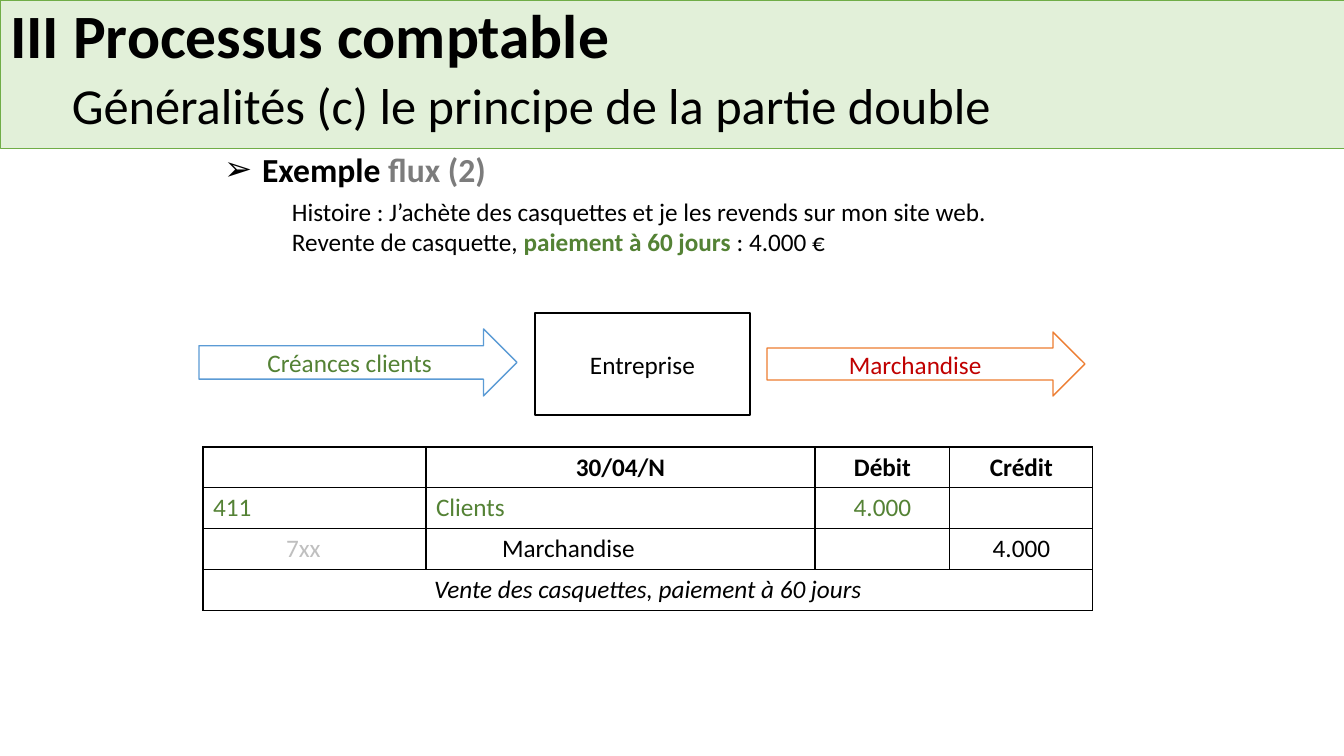
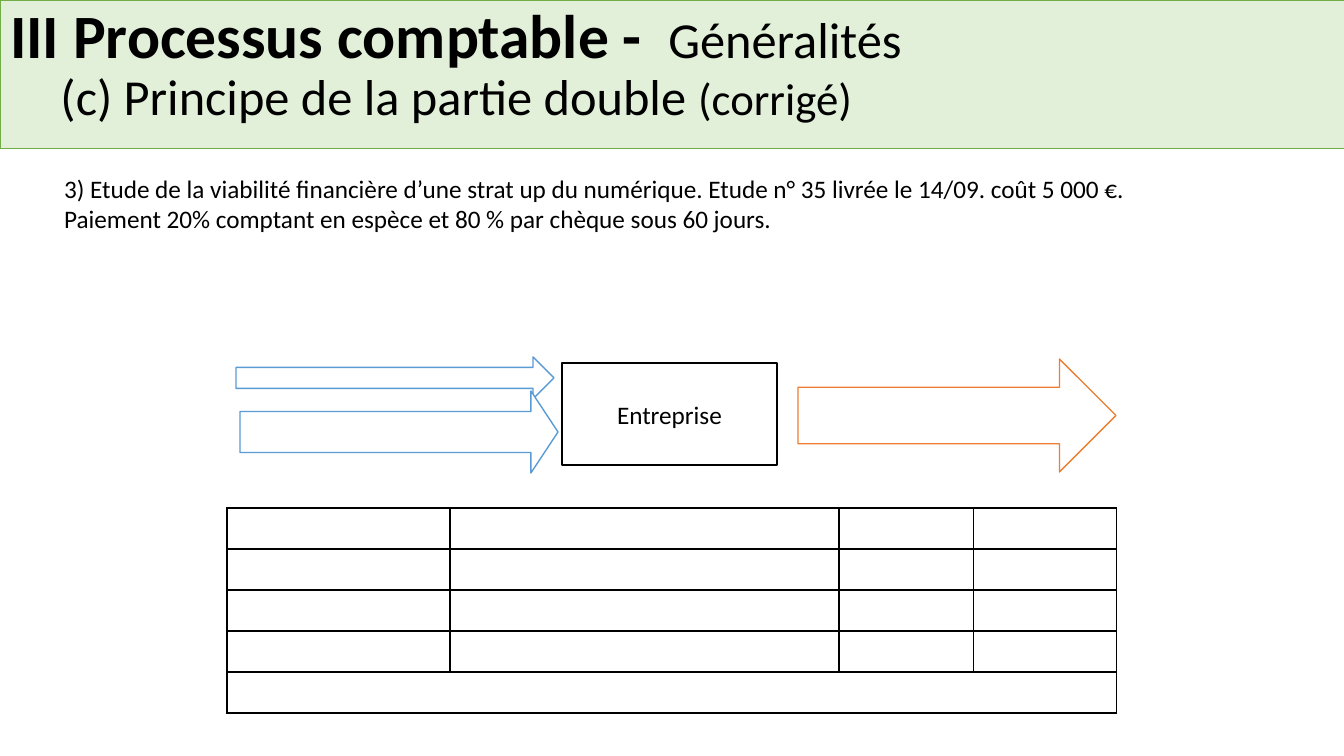
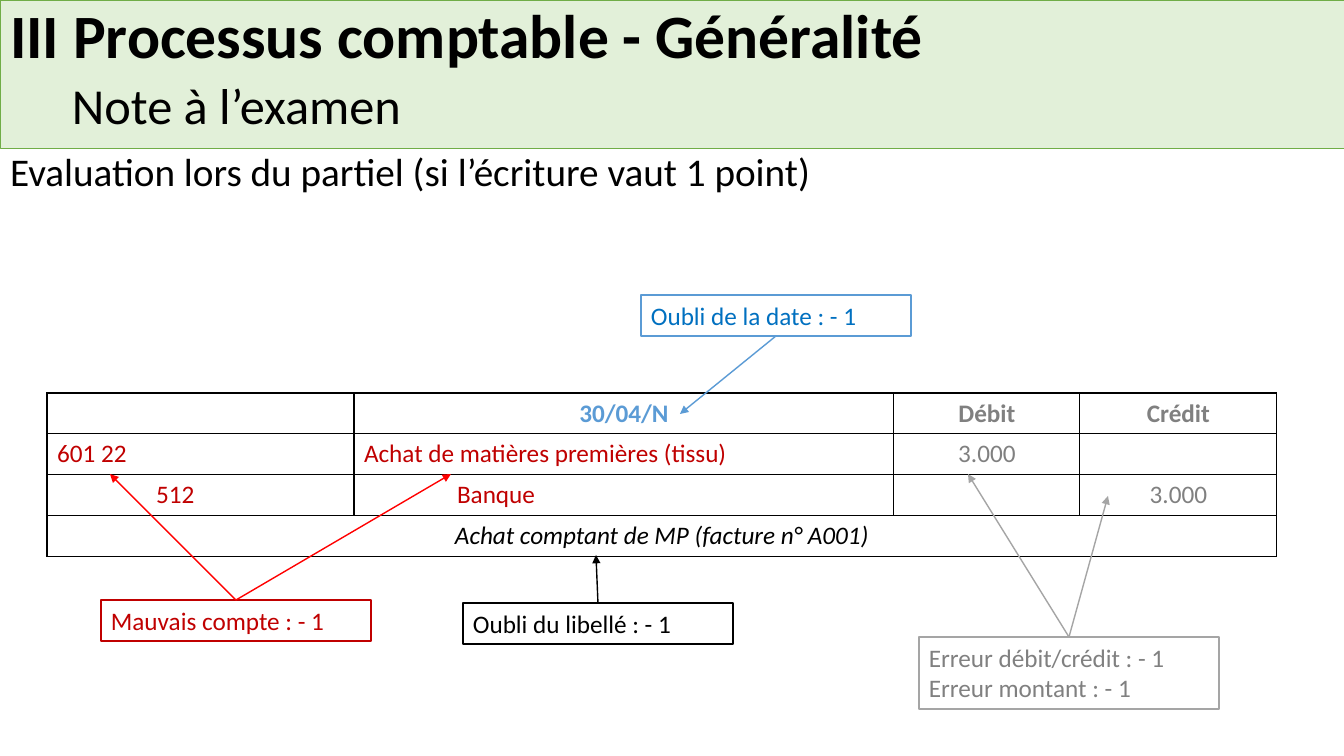
from dataclasses import dataclass

from lxml import etree
from pptx import Presentation
from pptx import util as u
from pptx.dml import color as dml
from pptx.enum import shapes, text
from pptx.oxml import ns

EMU_PER_PX = 914400 / 100.8
FONT = "Calibri"
COLORS = {
    "black": "000000", "white": "FFFFFF", "band": "E2F0D9", "band_line": "70AD47",
    "green": "548235", "crimson": "C00000", "red": "FF0000", "orange": "ED7D31",
    "sky": "5B9BD5", "blue": "0070C0", "dim": "7C7C7C", "grey": "808080",
    "silver": "A5A5A5", "pale": "BFBFBF",
}
LEFT, CENTER = text.PP_ALIGN.LEFT, text.PP_ALIGN.CENTER
TOP, MIDDLE = text.MSO_ANCHOR.TOP, text.MSO_ANCHOR.MIDDLE
BOTTOM_SIDE, TOP_SIDE = 2, 0


@dataclass
class Span:
    text: str
    color: str = "black"
    size: int = 18
    bold: bool = False
    italic: bool = False


def px(length):
    return u.Emu(round(length * EMU_PER_PX))


def rgb(name):
    return dml.RGBColor.from_string(COLORS[name])


class Course:
    """Holds the deck, its style and the current page."""

    def __init__(self):
        self.deck = Presentation()
        self.deck.slide_width, self.deck.slide_height = px(1344), px(756)
        self.page = None

    # Text
    def add_spans(self, para, spans, align=LEFT):
        para.alignment = align
        for span in spans:
            run = para.add_run()
            run.text = span.text
            font = run.font
            font.name, font.size = FONT, u.Pt(span.size)
            font.bold, font.italic = span.bold, span.italic
            font.color.rgb = rgb(span.color)

    def fill_frame(self, frame, paras, align=LEFT, anchor=TOP):
        frame.word_wrap = True
        frame.auto_size = text.MSO_AUTO_SIZE.NONE
        frame.vertical_anchor = anchor
        for index, spans in enumerate(paras):
            para = frame.paragraphs[0] if index == 0 else frame.add_paragraph()
            self.add_spans(para, spans, align)
        return frame.paragraphs

    def place(self, shape, left, top, width, height):
        shape.left, shape.top = px(left), px(top)
        shape.width, shape.height = px(width), px(height)

    def outline(self, shape, fill, line, points=1.0):
        shape.fill.solid()
        shape.fill.fore_color.rgb = rgb(fill)
        shape.line.color.rgb = rgb(line)
        shape.line.width = u.Pt(points)

    # Page with its title band
    def new_page(self, *title_lines):
        self.page = self.deck.slides.add_slide(self.deck.slide_layouts[1])
        band = self.page.shapes.title
        self.place(band, 0, 0, 1344, 148)
        self.outline(band, "band", "band_line", 0.5)
        for para in self.fill_frame(band.text_frame, title_lines):
            para.line_spacing = 0.9

    def body(self, left, top, width, height, spans, bullet=None, spacing=1.0, before=0):
        holder = self.page.placeholders[1]
        self.place(holder, left, top, width, height)
        para = self.fill_frame(holder.text_frame, [spans])[0]
        para.line_spacing, para.space_before = spacing, u.Pt(before)
        props = para._p.get_or_add_pPr()
        hang = px(38) if bullet else 0
        props.set("marL", str(hang))
        props.set("indent", str(-hang))
        mark = etree.SubElement(props, ns.qn("a:buChar" if bullet else "a:buNone"))
        if bullet:
            mark.set("char", bullet)

    def textbox(self, left, top, width, height, paras):
        box = self.page.shapes.add_textbox(px(left), px(top), px(width), px(height))
        self.fill_frame(box.text_frame, paras)

    # Boxes and arrows
    def preset(self, kind, left, top, width, height, line, paras=(),
               align=CENTER, anchor=MIDDLE):
        shape = self.page.shapes.add_shape(kind, px(left), px(top), px(width), px(height))
        shape.shadow.inherit = False
        self.outline(shape, "white", line)
        self.fill_frame(shape.text_frame, paras, align, anchor)
        return shape

    def company(self, left, top):
        self.preset(shapes.MSO_SHAPE.RECTANGLE, left, top, 215, 102, "black",
                    [[Span("Entreprise")]])

    def flow(self, left, top, height, line, label=None, head=0.5):
        arrow = self.preset(shapes.MSO_SHAPE.RIGHT_ARROW, left, top, 318, height, line,
                            [[label]] if label else [])
        arrow.adjustments[1] = head

    def callout(self, left, top, width, height, line, lines, color, side, targets,
                arrow_color=None):
        box = self.preset(shapes.MSO_SHAPE.RECTANGLE, left, top, width, height, line,
                          [[Span(words, color)] for words in lines], LEFT, TOP)
        for x, y in targets:
            arrow = self.page.shapes.add_connector(
                shapes.MSO_CONNECTOR.STRAIGHT, px(left), px(top), px(x), px(y))
            arrow.begin_connect(box, side)
            arrow.line.color.rgb = rgb(arrow_color or line)
            arrow.line.width = u.Pt(1)
            props = arrow._element.spPr
            etree.SubElement(props.find(ns.qn("a:ln")), ns.qn("a:tailEnd"), type="triangle")
            etree.SubElement(props, ns.qn("a:effectLst"))

    # Journal table: an account and a label column, each in two parts, then two amounts
    def border(self, cell, hidden=""):
        props = cell._tc.get_or_add_tcPr()
        for index, side in enumerate("LRTB"):
            line = etree.Element(ns.qn("a:ln" + side), w=str(u.Pt(1)))
            if side == hidden:
                etree.SubElement(line, ns.qn("a:noFill"))
            else:
                solid = etree.SubElement(line, ns.qn("a:solidFill"))
                etree.SubElement(solid, ns.qn("a:srgbClr"), val=COLORS["black"])
            props.insert(index, line)

    def journal(self, left, top, widths, row_height, rows):
        """Each row is (kind, spans); kind is head, debit, credit or caption."""
        frame = self.page.shapes.add_table(
            len(rows), len(widths), px(left), px(top), px(sum(widths)),
            px(row_height * len(rows)))
        table = frame.table
        table.first_row = table.horz_banding = False
        for column, width in zip(table.columns, widths):
            column.width = px(width)
        for r, (kind, spans) in enumerate(rows):
            table.rows[r].height = px(row_height)
            split = kind == "credit"
            for c in range(len(widths)):
                cell = table.cell(r, c)
                cell.fill.background()
                self.border(cell, "RL"[c % 2] if split and c < 4 else "")
            if kind == "caption":
                table.cell(r, 0).merge(table.cell(r, 5))
            elif not split:
                for c in (0, 2):
                    table.cell(r, c).merge(table.cell(r, c + 1))
            starts = (1, 3, 4, 5) if split else (0, 2, 4, 5)
            for c, span in zip(starts, spans):
                if span:
                    centred = kind in ("head", "caption") or c >= 4
                    self.add_spans(table.cell(r, c).text_frame.paragraphs[0], [span],
                                   CENTER if centred else LEFT)


def heading(words):
    return Span(words, size=44, bold=True)


def subtitle(words, size=36):
    return Span(words, size=size)


JOURNAL_WIDTHS = (73, 150, 66, 323, 135, 143)
WIDE_JOURNAL_WIDTHS = (99, 208, 93, 447, 186, 197)


def sale_example(course):
    course.new_page(
        [heading("III Processus comptable")],
        [heading("\t"), subtitle(" Généralités (c) le principe de la partie double")])
    course.body(214, 144, 914, 50,
                [Span("Exemple ", size=24, bold=True),
                 Span("flux (2)", "dim", 24, True)], bullet="➢")
    course.textbox(282, 191, 778, 72, [
        [Span("Histoire : J’achète des casquettes et je les revends sur mon site web.")],
        [Span("Revente de casquette, "), Span("paiement à 60 jours ", "green", bold=True),
         Span(": 4.000 €")]])
    course.company(535, 313)
    course.flow(199, 329, 67, "sky", Span("Créances clients", "green"))
    course.flow(767, 332, 64, "orange", Span("Marchandise ", "crimson"))
    course.journal(203, 447, JOURNAL_WIDTHS, 40, [
        ("head", [None, Span("30/04/N", bold=True), Span("Débit", bold=True),
                  Span("Crédit", bold=True)]),
        ("debit", [Span("411", "green"), Span("Clients", "green"), Span("4.000", "green")]),
        ("credit", [Span("7xx", "pale"), Span("Marchandise"), None, Span("4.000")]),
        ("caption", [Span("Vente des casquettes, paiement à 60 jours", italic=True)])])


def study_exercise(course):
    course.new_page(
        [heading("III Processus comptable - "), subtitle(" Généralités")],
        [subtitle("\t(c) Principe de la partie double "), subtitle("(corrigé)", 32)])
    course.body(54, 168, 1175, 72, [Span(
        "3) Etude de la viabilité financière d’une strat up du numérique. Etude n° 35 "
        "livrée le 14/09. coût 5 000 €. Paiement 20% comptant en espèce et 80 % par "
        "chèque sous 60 jours.")])
    course.company(562, 363)
    course.flow(798, 359, 113, "orange")
    course.flow(236, 357, 42, "sky")
    course.flow(240, 391, 82, "sky", head=0.33)
    kinds = ("head", "debit", "credit", "credit", "caption")
    course.journal(227, 508, JOURNAL_WIDTHS, 41, [(kind, []) for kind in kinds])


def exam_marking(course):
    course.new_page(
        [heading("III Processus comptable - Généralité")],
        [heading("\t"), subtitle(" Note à l’examen")])
    course.body(0, 148, 1344, 608,
                [Span("Evaluation lors du partiel (si l’écriture vaut 1 point)", size=28)],
                spacing=0.9, before=10)
    course.journal(47, 393, WIDE_JOURNAL_WIDTHS, 40, [
        ("head", [None, Span("30/04/N", "sky", bold=True), Span("Débit", "grey", bold=True),
                  Span("Crédit", "grey", bold=True)]),
        ("debit", [Span("601 22", "crimson"),
                   Span("Achat de matières premières (tissu)", "crimson"),
                   Span("3.000", "grey")]),
        ("credit", [Span("512", "crimson"), Span("Banque", "crimson"), None,
                    Span("3.000", "grey")]),
        ("caption", [Span("Achat comptant de MP (facture n° A001)", italic=True)])])
    course.callout(641, 295, 270, 41, "sky", ["Oubli de la date : - 1"], "blue",
                   BOTTOM_SIDE, [(680, 414)])
    course.callout(463, 603, 270, 41, "black", ["Oubli du libellé : - 1"], "black",
                   TOP_SIDE, [(596, 555)])
    course.callout(101, 600, 270, 41, "crimson", ["Mauvais compte : - 1"], "crimson",
                   TOP_SIDE, [(110, 474), (451, 474)], arrow_color="red")
    course.callout(919, 637, 300, 72, "silver",
                   ["Erreur débit/crédit : - 1", "Erreur montant : - 1"], "grey",
                   TOP_SIDE, [(968, 474), (1108, 496)])


def main():
    course = Course()
    for build in (sale_example, study_exercise, exam_marking):
        build(course)
    course.deck.save("out.pptx")


if __name__ == "__main__":
    main()
